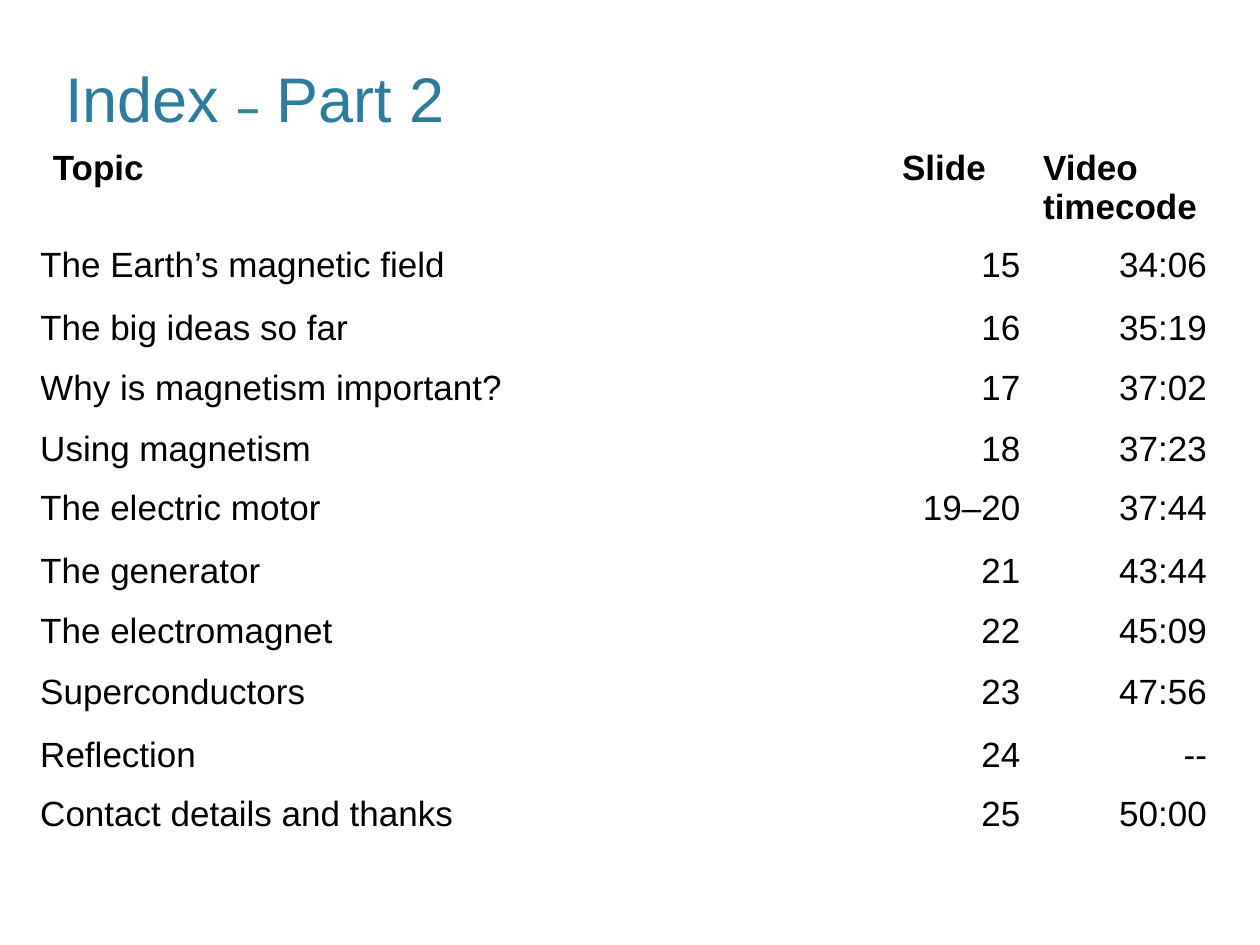
from pptx import Presentation
from pptx import util as u
from pptx.dml.color import RGBColor
from pptx.enum import text

COLOURS = {"title": "2C7C9F", "dash": "31859C", "body": "000000"}
COLUMNS = [485.3, 80.6, 106.6]
ROWS = [56.9, 36, 34.6, 34.6, 33.8, 36, 34.6, 34.6, 36, 33.8, 53.3]
HEADINGS = ("Topic", "Slide", "Video timecode")
TOPICS = [
    ("The Earth’s magnetic field", "15", "34:06"),
    ("The big ideas so far", "16", "35:19"),
    ("Why is magnetism important?", "17", "37:02"),
    ("Using magnetism", "18", "37:23"),
    ("The electric motor", "19–20", "37:44"),
    ("The generator", "21", "43:44"),
    ("The electromagnet", "22", "45:09"),
    ("Superconductors", "23", "47:56"),
    ("Reflection", "24", "--"),
    ("Contact details and thanks", "25", "50:00"),
]


class IndexPage:
    """Hold the style and the current slide, and add elements to it."""

    font = "Arial"
    body_size = 20
    heading_insets = (7.2, 7.2, 7.2, 7.2)
    topic_insets = (0, 0, 5.8, 0)

    def __init__(self, page):
        self.page = page

    def span(self, para, words, size, colour, bold=False):
        span = para.add_run()
        span.text = words
        span.font.name = self.font
        span.font.size = u.Pt(size)
        span.font.bold = bold
        span.font.color.rgb = RGBColor.from_string(COLOURS[colour])

    def insets(self, holder, values):
        sides = ("left", "top", "right", "bottom")
        for side, value in zip(sides, values):
            setattr(holder, f"margin_{side}", u.Pt(value))

    def title(self, left, top, width, height, spans):
        box = self.page.shapes.add_textbox(*map(u.Pt, (left, top, width, height)))
        frame = box.text_frame
        frame.word_wrap = True
        frame.vertical_anchor = text.MSO_ANCHOR.BOTTOM
        self.insets(frame, self.heading_insets)
        for span in spans:
            self.span(frame.paragraphs[0], *span)

    def cell(self, cell, words, heading, right):
        cell.fill.background()
        cell.vertical_anchor = text.MSO_ANCHOR.TOP
        self.insets(cell, self.heading_insets if heading else self.topic_insets)
        para = cell.text_frame.paragraphs[0]
        para.alignment = text.PP_ALIGN.RIGHT if right else text.PP_ALIGN.LEFT
        self.span(para, words, self.body_size, "body", heading)

    def table(self, left, top, widths, heights, records):
        frame = self.page.shapes.add_table(
            len(heights), len(widths),
            *map(u.Pt, (left, top, sum(widths), sum(heights))))
        table = frame.table
        table.first_row = table.horz_banding = False
        for column, width in zip(table.columns, widths):
            column.width = u.Pt(width)
        for i, (height, record) in enumerate(zip(heights, records)):
            table.rows[i].height = u.Pt(height)
            for j, words in enumerate(record):
                self.cell(table.cell(i, j), words, i == 0, i > 0 and j > 0)


def main():
    deck = Presentation()
    deck.slide_width, deck.slide_height = u.Pt(720), u.Pt(540)
    index = IndexPage(deck.slides.add_slide(deck.slide_layouts[6]))
    index.title(30.2, 31.7, 313.9, 52.6, [
        ("Index ", 36, "title"),
        ("–", 23, "dash", True),
        (" Part 2", 36, "title"),
    ])
    index.table(23, 77.8, COLUMNS, ROWS, [HEADINGS, *TOPICS])
    deck.save("out.pptx")


if __name__ == "__main__":
    main()
